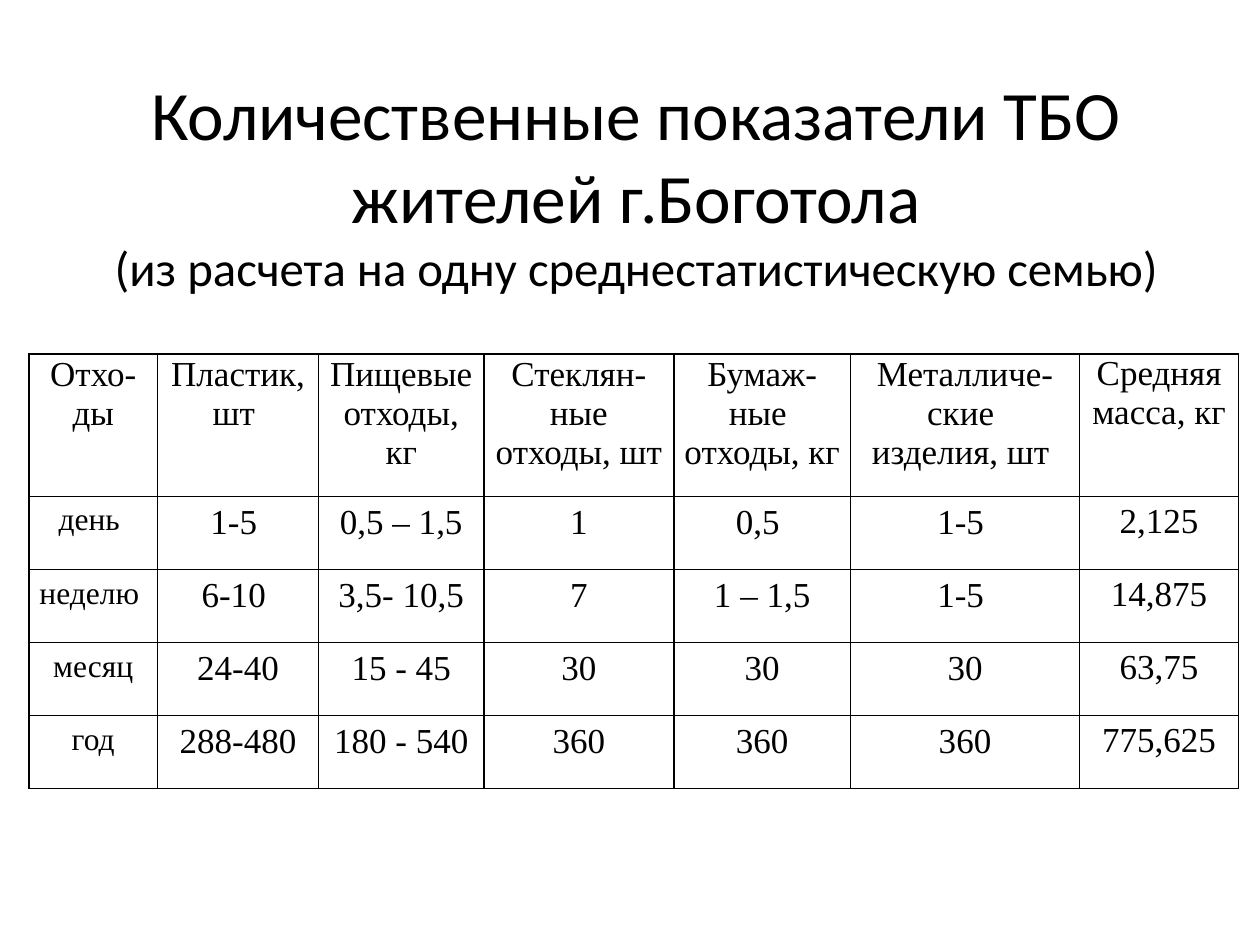
from lxml import etree
from pptx import Presentation
from pptx.dml.color import RGBColor
from pptx.enum.text import MSO_ANCHOR as Anchor, PP_ALIGN as Align
from pptx.oxml.ns import qn
from pptx.util import Inches, Pt

COLORS = {"text": "000000", "border": "000000", "background": "FFFFFF"}
TITLE_FONT = "Calibri"
TABLE_FONT = "Times New Roman"
COLUMN_WIDTHS = [1.02, 1.28, 1.31, 1.51, 1.4, 1.82, 1.26]
HEADER_HEIGHT = 1.13
ROW_HEIGHT = 0.58
HEADERS = [
    ["Отхо-ды"],
    ["Пластик, шт "],
    ["Пищевые ", "отходы, кг"],
    ["Стеклян-ные", "отходы, шт"],
    ["Бумаж-ные ", "отходы, кг "],
    ["Металличе-ские ", "изделия, шт "],
    ["Средняя масса, кг"],
]
WASTE_ROWS = [
    ["день ", "1-5 ", "0,5 – 1,5", "1", "0,5 ", "1-5 ", "2,125"],
    ["неделю ", "6-10 ", "3,5- 10,5", "7", "1 – 1,5", "1-5 ", "14,875"],
    ["месяц", "24-40", "15 - 45", "30", "30", "30", "63,75"],
    ["год", "288-480", "180 - 540", "360", "360", "360", "775,625"],
]


def add_run(paragraph, text, size, font_name):
    """Append one formatted run to a paragraph."""
    run = paragraph.add_run()
    run.text = text
    run.font.size = Pt(size)
    run.font.name = font_name
    run.font.color.rgb = RGBColor.from_string(COLORS["text"])


def set_borders(cell):
    """Draw a thin solid line on all four sides of a cell."""
    properties = cell._tc.get_or_add_tcPr()
    for index, side in enumerate(("a:lnL", "a:lnR", "a:lnT", "a:lnB")):
        line = etree.Element(qn(side), w=str(Pt(1)))
        fill = etree.SubElement(line, qn("a:solidFill"))
        etree.SubElement(fill, qn("a:srgbClr"), val=COLORS["border"])
        properties.insert(index, line)


def fill_cell(cell, lines, size, spacing, is_last):
    """Write centred lines into a cell and style its box."""
    cell.margin_left = cell.margin_right = Inches(0 if is_last else 0.07)
    cell.margin_top = Inches(0 if is_last else 0.01)
    cell.margin_bottom = Inches(0)
    cell.fill.background()
    set_borders(cell)
    frame = cell.text_frame
    for index, text in enumerate(lines):
        paragraph = frame.add_paragraph() if index else frame.paragraphs[0]
        paragraph.alignment = Align.CENTER
        paragraph.line_spacing = spacing
        add_run(paragraph, text, size, TABLE_FONT)


def add_title(slide, left, top, width, height):
    """Place the heading and its smaller second part in the given box."""
    shape = slide.shapes.add_textbox(Inches(left), Inches(top), Inches(width), Inches(height))
    frame = shape.text_frame
    frame.word_wrap = True
    frame.vertical_anchor = Anchor.MIDDLE
    frame.margin_top = Inches(0.16)
    paragraph = frame.paragraphs[0]
    paragraph.alignment = Align.CENTER
    add_run(paragraph, "Количественные показатели ТБО жителей г.Боготола", 39.6, TITLE_FONT)
    paragraph.add_line_break()
    add_run(paragraph, "(из расчета на одну среднестатистическую семью)", 27.9, TITLE_FONT)


def add_waste_table(slide, left, top):
    """Place the waste table with its top left corner at the given point."""
    height = HEADER_HEIGHT + ROW_HEIGHT * len(WASTE_ROWS)
    frame = slide.shapes.add_table(
        len(WASTE_ROWS) + 1, len(HEADERS),
        Inches(left), Inches(top), Inches(sum(COLUMN_WIDTHS)), Inches(height),
    )
    table = frame.table
    table.first_row = table.horz_banding = False
    for column, width in zip(table.columns, COLUMN_WIDTHS):
        column.width = Inches(width)
    for index, row in enumerate(table.rows):
        row.height = Inches(ROW_HEIGHT if index else HEADER_HEIGHT)
    last = len(HEADERS) - 1
    for column, lines in enumerate(HEADERS):
        fill_cell(table.cell(0, column), lines, 20, 1.0, column == last)
    for row, values in enumerate(WASTE_ROWS, start=1):
        for column, value in enumerate(values):
            size = 20 if column else 18
            fill_cell(table.cell(row, column), [value], size, 1.15, column == last)


def main():
    """Build and save the presentation."""
    presentation = Presentation()
    presentation.slide_width = Inches(10)
    presentation.slide_height = Inches(7.5)
    slide = presentation.slides.add_slide(presentation.slide_layouts[6])
    background = slide.background.fill
    background.solid()
    background.fore_color.rgb = RGBColor.from_string(COLORS["background"])
    add_title(slide, 0.55, 0.39, 9, 2.03)
    add_waste_table(slide, 0.23, 2.81)
    presentation.save("out.pptx")


if __name__ == "__main__":
    main()
